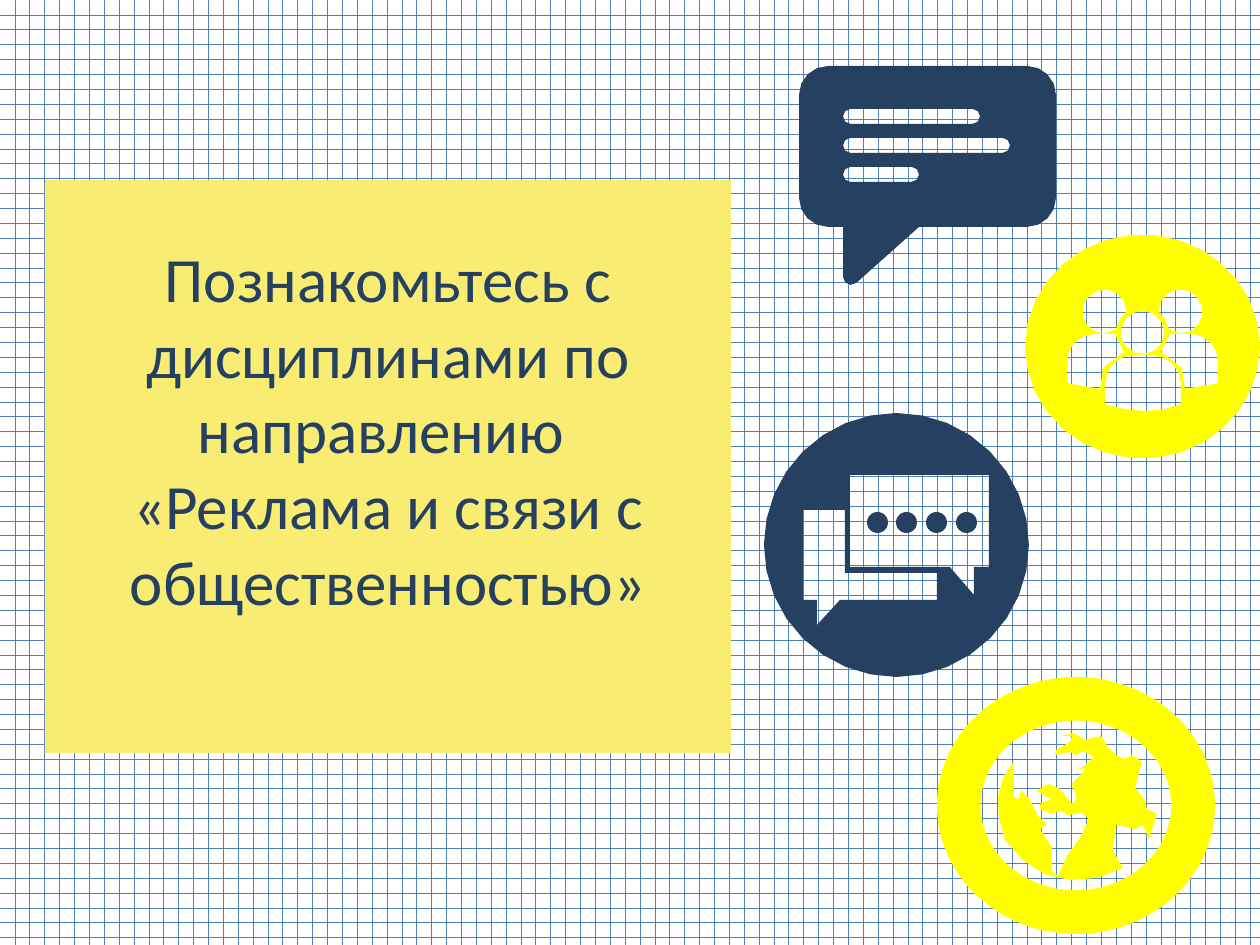
"""Build a slide that introduces the courses on advertising and public relations."""
from dataclasses import dataclass
from math import cos, radians, sin, sqrt

from pptx import Presentation
from pptx.dml.color import RGBColor
from pptx.enum.dml import MSO_PATTERN
from pptx.enum.shapes import MSO_SHAPE
from pptx.enum.text import MSO_ANCHOR, PP_ALIGN
from pptx.util import Emu, Pt

BRICK = MSO_PATTERN.HORIZONTAL_BRICK
RECT, OVAL, DONUT = MSO_SHAPE.RECTANGLE, MSO_SHAPE.OVAL, MSO_SHAPE.DONUT
MIDDLE, CENTER = MSO_ANCHOR.MIDDLE, PP_ALIGN.CENTER

SCALE = 914400 / 126
NAVY, YELLOW, CREAM = "254061", "FFFF00", "F9EC73"
BLUE, WHITE = "4F81BD", "FFFFFF"
FONT = "Calibri"
TITLE = ("Познакомьтесь с дисциплинами по направлению \v"
         "«Реклама и связи с общественностью»")

Points = list[tuple[float, float]]


@dataclass
class Icon:
    """A filled outline; inner contours are holes."""
    color: str
    paths: list[Points]


def px(num: float) -> Emu:
    """Turn pixels into EMU."""
    return Emu(round(num * SCALE))


def rgb(code: str) -> RGBColor:
    """Turn a hex string into a colour."""
    return RGBColor.from_string(code)


def arc(x: float, y: float, rx: float, ry: float, start: int, end: int) -> Points:
    """Return points on a clockwise arc, finer on a larger radius."""
    count = max(3, round((end - start) * sqrt(rx) / 130))
    turns = [radians(start + (end - start) * i / count) for i in range(count + 1)]
    return [(x + rx * cos(t), y + ry * sin(t)) for t in turns]


def oval(x: float, y: float, rx: float, ry: float) -> Points:
    """Return an ellipse around a centre."""
    return arc(x, y, rx, ry, 0, 360)[:-1]


def pill(x: int, y: int, wide: int, high: int) -> Points:
    """Return a bar with round ends."""
    r = high / 2
    return (arc(x + r, y + r, r, r, 90, 270)
            + arc(x + wide - r, y + r, r, r, 270, 450))


def mirror(path: Points, axis: float) -> Points:
    """Flip a contour about a vertical axis."""
    return [(2 * axis - x, y) for x, y in path]


def paint(shape, color: str) -> None:
    """Give a shape a flat fill with no line or shadow."""
    shape.shadow.inherit = False
    shape.fill.solid()
    shape.fill.fore_color.rgb = rgb(color)
    shape.line.fill.background()


def draw(slide, icon: Icon) -> None:
    """Draw an icon as one freeform."""
    first, *rest = [[(px(x), px(y)) for x, y in path] for path in icon.paths]
    pen = slide.shapes.build_freeform(*first[0], scale=1.0)
    pen.add_line_segments(first[1:], close=True)
    for path in rest:
        pen.move_to(*path[0])
        pen.add_line_segments(path[1:], close=True)
    paint(pen.convert_to_shape(), icon.color)


def block(slide, kind, x: int, y: int, wide: int, high: int, color: str):
    """Add a preset shape."""
    shape = slide.shapes.add_shape(kind, px(x), px(y), px(wide), px(high))
    paint(shape, color)
    return shape


def people() -> Icon:
    """Return three people in a disc."""
    axis = 1142.5
    head = arc(1104.5, 311.5, 22, 22, 90, 360) + [(1120, 319), (1116, 329)]
    side = (arc(1095, 361, 28, 27, 180, 270)
            + [(1115, 334), (1124, 352), (1103, 368), (1100, 389), (1067, 383)])
    body = (arc(1133.5, 384, 28.5, 29, 180, 270)
            + arc(1151.5, 384, 29.5, 29, 270, 360)
            + [(1181, 404), (1165, 409), (1145, 411), (1125, 409), (1105, 404)])
    return Icon(YELLOW, [oval(axis, 346.5, 117.5, 112), oval(axis, 332.5, 22, 21.5),
                         head, mirror(head, axis), side, mirror(side, axis), body])


def speech() -> Icon:
    """Return a speech bubble with three bars of text."""
    left, right, top, low, r = 828, 1027, 95, 198, 29
    edge = (arc(left, top, r, r, 180, 270) + arc(right, top, r, r, 270, 360)
            + arc(right, low, r, r, 0, 90) + [(919, 227)]
            + arc(851, 277, 8, 8, 50, 180) + [(843, 227)]
            + arc(left, low, r, r, 90, 180))
    bars = [pill(843, 109 + 29 * i, wide, 15) for i, wide in enumerate((137, 167, 76))]
    return Icon(NAVY, [edge, *bars])


def chat() -> Icon:
    """Return two chat boxes in a disc."""
    back = [(803, 510), (845, 510), (845, 573), (937, 573), (937, 600),
            (840, 600), (817, 625), (817, 600), (803, 600)]
    front = [(850, 475), (989, 475), (989, 567), (974, 567), (974, 595),
             (950, 567), (850, 567)]
    return Icon(NAVY, [oval(896.5, 545, 132.5, 132), back, front])


LAND = [
    (1145, 800), (1135, 788), (1142, 762), (1132, 755), (1125, 759), (1116, 755),
    (1108, 747), (1101, 736), (1085, 740), (1074, 733), (1060, 736), (1072, 736),
    (1070, 742), (1056, 750), (1055, 755), (1070, 752), (1076, 755), (1083, 751),
    (1094, 757), (1080, 769), (1086, 769), (1072, 784), (1077, 799), (1072, 804),
    (1060, 789), (1049, 784), (1036, 791), (1051, 799), (1040, 804), (1040, 809),
    (1051, 814), (1061, 811), (1068, 815), (1082, 813), (1089, 819), (1080, 838),
    (1068, 854), (1058, 876), (1052, 871), (1052, 848), (1040, 829), (1047, 824),
    (1038, 816), (1029, 798), (1021, 790), (1019, 799), (1014, 797), (1014, 761),
    (1003, 778), (998, 796), (999, 818), (1005, 840), (1023, 860), (1044, 874),
    (1070, 880), (1097, 878), (1123, 868), (1113, 851), (1116, 825), (1135, 829),
    (1143, 825), (1149, 839), (1157, 814), (1147, 809),
]


def title(slide) -> None:
    """Add the text on its panel."""
    frame = block(slide, RECT, 45, 180, 686, 573, CREAM).text_frame
    frame.word_wrap = True
    frame.vertical_anchor = MIDDLE
    frame.margin_bottom = px(82)
    frame.text = TITLE
    para = frame.paragraphs[0]
    para.alignment = CENTER
    for run in para.runs:
        run.font.name = FONT
        run.font.size = Pt(36)
        run.font.color.rgb = rgb(NAVY)


def main() -> None:
    """Build and save the slide."""
    deck = Presentation()
    deck.slide_width, deck.slide_height = px(1260), px(945)
    slide = deck.slides.add_slide(deck.slide_layouts[6])
    fill = slide.background.fill
    fill.patterned()
    fill.pattern = BRICK
    fill.fore_color.rgb = rgb(BLUE)
    fill.back_color.rgb = rgb(WHITE)
    title(slide)
    for icon in (people(), speech(), Icon(YELLOW, [LAND]), chat()):
        draw(slide, icon)
    ring = block(slide, DONUT, 937, 677, 278, 257, YELLOW)
    ring.adjustments[0] = 0.17
    for i in range(4):
        block(slide, OVAL, 867 + i * 89 // 3, 512, 21, 21, NAVY)
    deck.save("out.pptx")


if __name__ == "__main__":
    main()
